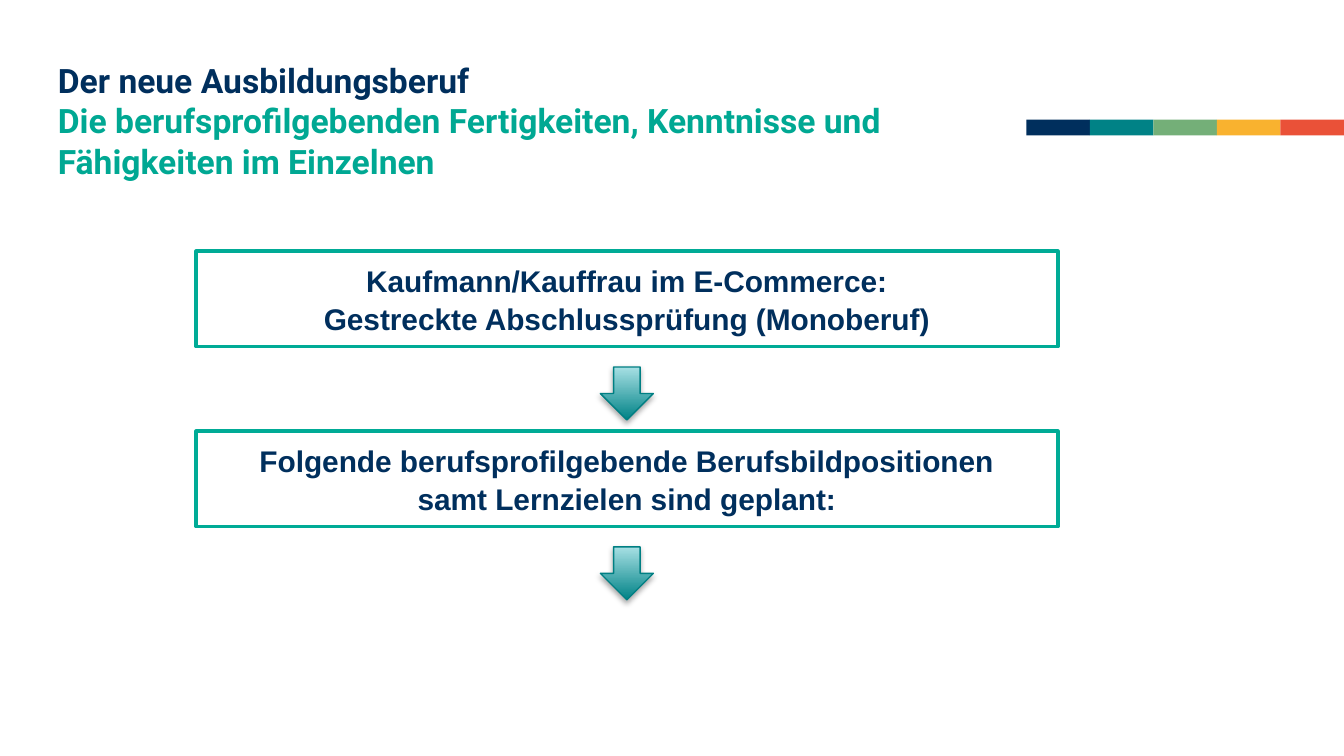
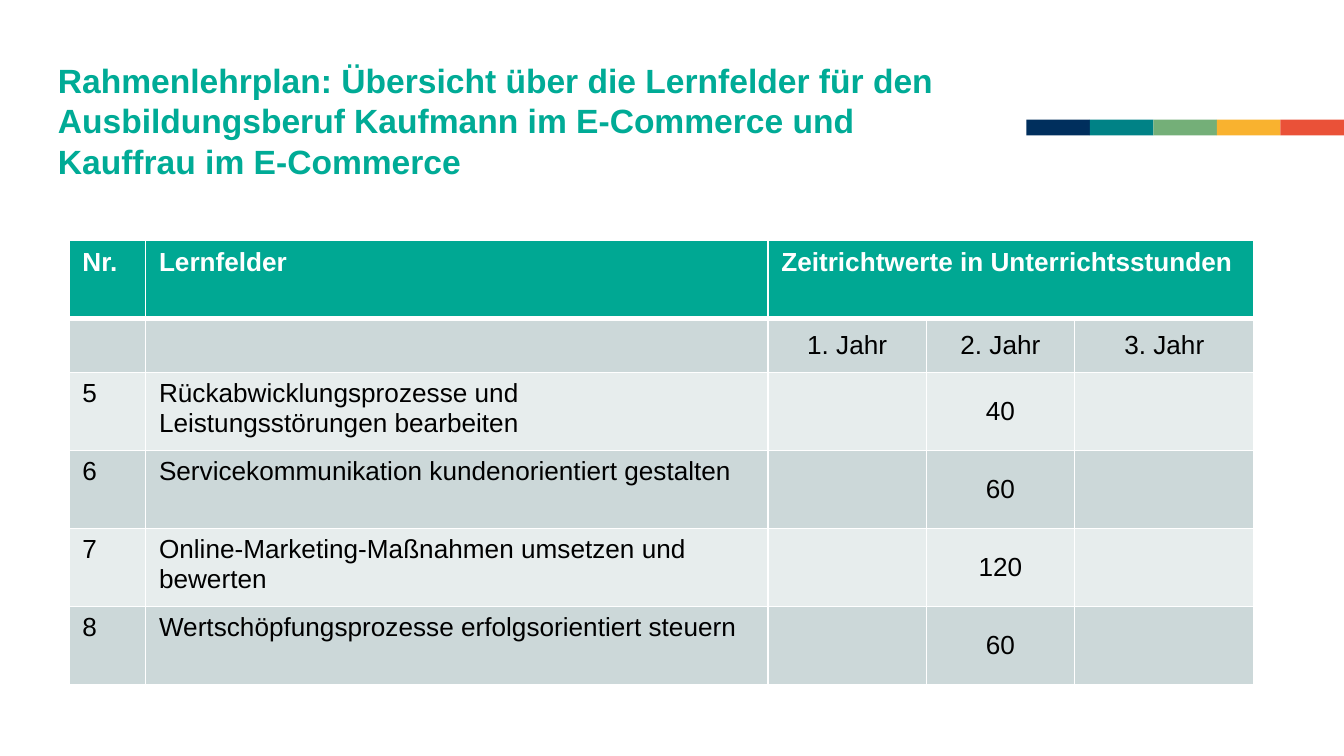
from dataclasses import dataclass

from lxml import etree
from pptx import Presentation
from pptx.dml.color import RGBColor
from pptx.enum.shapes import MSO_SHAPE as Preset
from pptx.enum.text import MSO_ANCHOR as Anchor, MSO_AUTO_SIZE as AutoSize, PP_ALIGN as Align
from pptx.oxml import parse_xml
from pptx.oxml.ns import nsdecls, qn
from pptx.util import Pt


@dataclass(frozen=True)
class Theme:
    navy: str = "002F5D"
    teal: str = "008286"
    teal_light: str = "A7E0E4"
    teal_edge: str = "007F83"
    green: str = "00AB96"
    green_deep: str = "00A893"
    sage: str = "74AF78"
    amber: str = "F9B22F"
    coral: str = "EA5138"
    row_dark: str = "CCD8D9"
    row_light: str = "E7EDED"
    white: str = "FFFFFF"
    black: str = "000000"
    title_size: float = 18
    title_leading: float = 21.5
    step_size: float = 16
    table_size: float = 14
    font: str = "Arial"
    title_font: str = "Roboto"


THEME = Theme()
WIDTH, HEIGHT = 720, 405
LEARNING_FIELDS = [
    ("5", "Rückabwicklungsprozesse und Leistungsstörungen bearbeiten", "40"),
    ("6", "Servicekommunikation kundenorientiert gestalten", "60"),
    ("7", "Online-Marketing-Maßnahmen umsetzen und bewerten", "120"),
    ("8", "Wertschöpfungsprozesse erfolgsorientiert steuern", "60"),
]


def rgb(colour):
    return RGBColor.from_string(colour)


def place(shape, left, top, width, height):
    shape.left, shape.top = Pt(left), Pt(top)
    shape.width, shape.height = Pt(width), Pt(height)


def style_font(font, size, colour, bold=False, name=THEME.font):
    font.name, font.size, font.bold = name, Pt(size), bold
    font.color.rgb = rgb(colour)


def add_preset(slide, preset, left, top, width, height):
    shape = slide.shapes.add_shape(preset, Pt(left), Pt(top), Pt(width), Pt(height))
    shape.shadow.inherit = False
    return shape


def prepare_layout(layout):
    title = layout.shapes.title if hasattr(layout.shapes, "title") else layout.placeholders[0]
    place(title, 31, 32.4, 490, 53)
    frame = title.text_frame
    frame.margin_left = frame.margin_right = frame.margin_top = frame.margin_bottom = 0
    frame.vertical_anchor = Anchor.TOP
    frame.auto_size = AutoSize.NONE


def add_colour_bar(slide):
    """Draw the bar on a slide, then move it to the layout all slides share."""
    width, start = 34.04, 549.8
    colours = (THEME.navy, THEME.teal, THEME.sage, THEME.amber, THEME.coral)
    for index, colour in enumerate(colours):
        band = add_preset(slide, Preset.RECTANGLE, start + index * width, 64.1, width, 8.5)
        band.fill.solid()
        band.fill.fore_color.rgb = rgb(colour)
        band.line.fill.background()
        band.element.nvSpPr.cNvPr.set("id", str(100 + index))
        slide.slide_layout.element.cSld.spTree.append(band.element)


def set_title(slide, lines, font_name, width):
    """Write (text, colour) lines into the title, separated by line breaks."""
    place(slide.shapes.title, 31, 32.4, width, 53)
    paragraph = slide.shapes.title.text_frame.paragraphs[0]
    paragraph.alignment = Align.LEFT
    paragraph.line_spacing = Pt(THEME.title_leading)
    for index, (text, colour) in enumerate(lines):
        if index:
            paragraph.add_line_break()
        run = paragraph.add_run()
        run.text = text
        style_font(run.font, THEME.title_size, colour, True, font_name)


def add_step(slide, text, left, top, width, height):
    step = add_preset(slide, Preset.RECTANGLE, left, top, width, height)
    step.fill.solid()
    step.fill.fore_color.rgb = rgb(THEME.white)
    step.line.color.rgb = rgb(THEME.green)
    step.line.width = Pt(2)
    frame = step.text_frame
    frame.word_wrap = False
    frame.vertical_anchor = Anchor.MIDDLE
    frame.text = text
    for paragraph in frame.paragraphs:
        paragraph.alignment = Align.CENTER
        paragraph.line_spacing = 1.05
        style_font(paragraph.font, THEME.step_size, THEME.navy, True)


def add_down_arrow(slide, left, top, size):
    arrow = add_preset(slide, Preset.DOWN_ARROW, left, top, size, size)
    arrow.fill.gradient()
    arrow.fill.gradient_angle = 90
    for stop, colour in zip(arrow.fill.gradient_stops, (THEME.teal, THEME.teal_light)):
        stop.color.rgb = rgb(colour)
    arrow.line.color.rgb = rgb(THEME.teal_edge)
    arrow.line.width = Pt(0.75)
    arrow.element.spPr.find(qn("a:effectLst")).append(parse_xml(
        f'<a:outerShdw {nsdecls("a")} blurRad="{Pt(3.1)}" dist="{Pt(1.8)}" dir="5400000" '
        f'rotWithShape="0"><a:srgbClr val="{THEME.black}"><a:alpha val="35000"/>'
        '</a:srgbClr></a:outerShdw>'))


def set_borders(cell, top, bottom):
    """Give the cell white borders; the sides are always 1 pt wide."""
    properties = cell._tc.get_or_add_tcPr()
    widths = {"lnL": 1, "lnR": 1, "lnT": top, "lnB": bottom}
    for index, (side, width) in enumerate(widths.items()):
        line = etree.Element(qn(f"a:{side}"), w=str(Pt(width)))
        fill = etree.SubElement(line, qn("a:solidFill"))
        etree.SubElement(fill, qn("a:srgbClr"), val=THEME.white)
        properties.insert(index, line)


def fill_cell(cell, text, row, column):
    header = row == 0
    cell.text = text
    paragraph = cell.text_frame.paragraphs[0]
    style_font(paragraph.font, THEME.table_size, THEME.white if header else THEME.black, header)
    if not header and column >= 2:
        paragraph.alignment = Align.CENTER
        cell.vertical_anchor = Anchor.MIDDLE
    cell.fill.solid()
    body_colour = THEME.row_dark if row % 2 else THEME.row_light
    cell.fill.fore_color.rgb = rgb(THEME.green_deep if header else body_colour)
    set_borders(cell, top=3 if row == 1 else 1, bottom=3 if header else 1)


def add_hours_table(slide):
    rows = [("Nr.", "Lernfelder", "Zeitrichtwerte in Unterrichtsstunden", "", ""),
            ("", "", "1. Jahr", "2. Jahr", "3. Jahr")]
    rows += [(number, field, "", hours, "") for number, field, hours in LEARNING_FIELDS]
    widths = (41, 333.4, 85, 79.2, 96.4)
    heights = [41.8, 28.8] + [41.8] * len(LEARNING_FIELDS)
    table = slide.shapes.add_table(len(rows), len(widths), Pt(37), Pt(128.9),
                                   Pt(sum(widths)), Pt(sum(heights))).table
    table.horz_banding = False
    for column, width in zip(table.columns, widths):
        column.width = Pt(width)
    for table_row, height in zip(table.rows, heights):
        table_row.height = Pt(height)
    for row, texts in enumerate(rows):
        for column, text in enumerate(texts):
            fill_cell(table.cell(row, column), text, row, column)
    table.cell(0, 2).merge(table.cell(0, 4))


def build_profile_slide(slide):
    set_title(slide, [
        ("Der neue Ausbildungsberuf", THEME.navy),
        ("Die berufsprofilgebenden Fertigkeiten, Kenntnisse und Fähigkeiten im Einzelnen",
         THEME.green_deep),
    ], THEME.title_font, 486)
    left, top, width, height, pitch, arrow_size = 105.1, 134.6, 461.5, 51.1, 96.4, 28.4
    steps = ("Kaufmann/Kauffrau im E-Commerce:\vGestreckte Abschlussprüfung (Monoberuf)",
             "Folgende berufsprofilgebende Berufsbildpositionen\nsamt Lernzielen sind geplant:")
    for index, text in enumerate(steps):
        step_top = top + index * pitch
        add_step(slide, text, left, step_top, width, height)
        add_down_arrow(slide, left + (width - arrow_size) / 2, step_top + 62, arrow_size)


def build_curriculum_slide(slide):
    set_title(slide, [
        ("Rahmenlehrplan: Übersicht über die Lernfelder für den Ausbildungsberuf "
         "Kaufmann im E-Commerce und Kauffrau im E-Commerce", THEME.green),
    ], THEME.font, 499)
    add_hours_table(slide)


def main():
    deck = Presentation()
    deck.slide_width, deck.slide_height = Pt(WIDTH), Pt(HEIGHT)
    title_only = deck.slide_layouts[5]
    prepare_layout(title_only)
    profile = deck.slides.add_slide(title_only)
    add_colour_bar(profile)
    build_profile_slide(profile)
    build_curriculum_slide(deck.slides.add_slide(title_only))
    deck.save("out.pptx")


if __name__ == "__main__":
    main()
